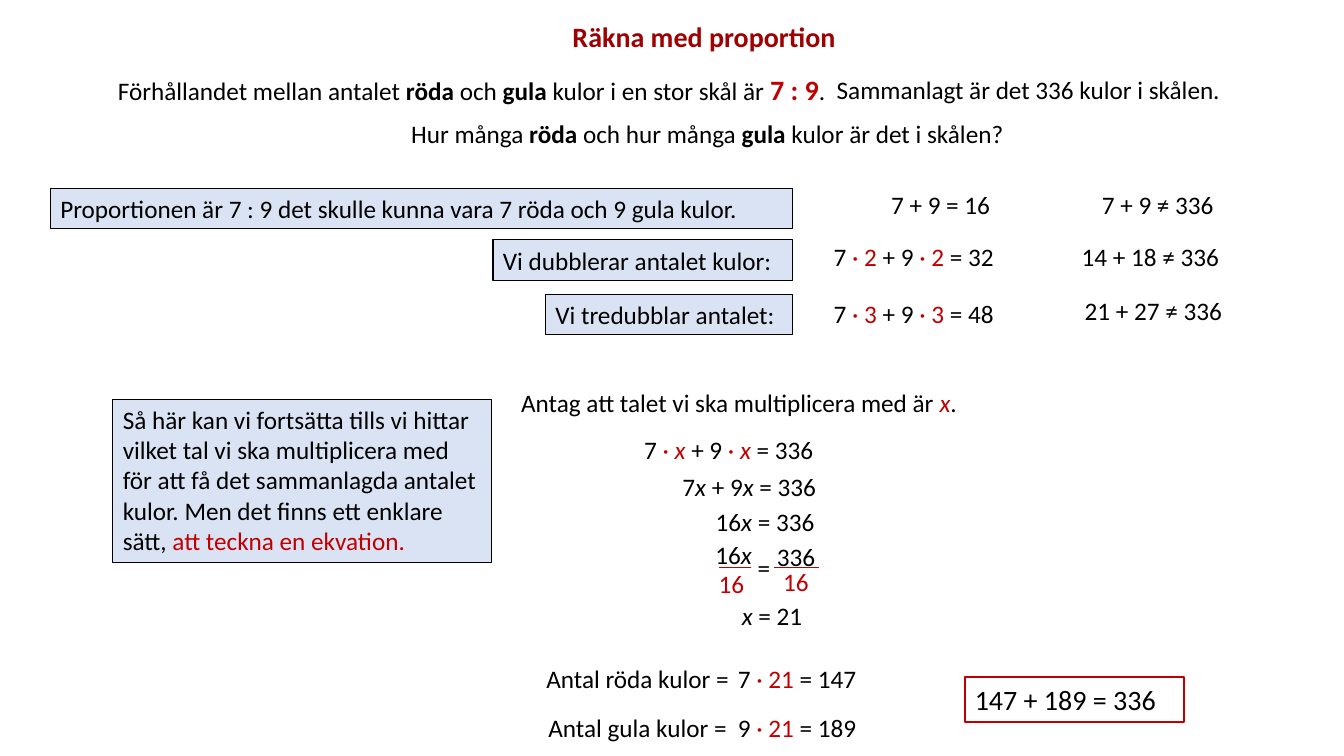
from pptx import Presentation
from pptx.dml.color import RGBColor
from pptx.enum.shapes import MSO_CONNECTOR, MSO_SHAPE
from pptx.enum.text import MSO_ANCHOR, MSO_AUTO_SIZE, PP_ALIGN
from pptx.util import Inches, Pt
from lxml.etree import SubElement
from pptx.oxml.ns import qn

BLACK, RED, TITLE_RED, PALE_BLUE = "000000", "C00000", "9F0002", "DAE3F3"


def color(value):
    return RGBColor.from_string(value)


def bold(text, **style):
    return text, {"bold": True, **style}


def italic(text, **style):
    return text, {"italic": True, **style}


def red(text):
    return text, {"ink": RED}


class Lesson:
    """Holds the text style and the current page."""

    font, size, line_height = "Calibri", 18, 0.4

    def __init__(self, page):
        self.page = page

    def fill_text(self, box, spans, size, wrap):
        frame = box.text_frame
        frame.word_wrap = wrap
        frame.auto_size = MSO_AUTO_SIZE.SHAPE_TO_FIT_TEXT
        frame.vertical_anchor = MSO_ANCHOR.TOP
        para = frame.paragraphs[0]
        para.alignment = PP_ALIGN.LEFT
        for item in spans:
            text, style = (item, {}) if isinstance(item, str) else item
            span = para.add_run()
            span.text = text
            span.font.name = self.font
            span.font.size = Pt(style.get("size", size))
            span.font.bold = style.get("bold", False)
            span.font.italic = style.get("italic", False)
            span.font.color.rgb = color(style.get("ink", BLACK))

    def text(self, left, top, width, *spans, height=line_height, size=size, wrap=True):
        box = self.page.shapes.add_textbox(
            Inches(left), Inches(top), Inches(width), Inches(height))
        self.fill_text(box, spans, size, wrap)

    def panel(self, left, top, width, *spans, height=line_height, size=size,
              fill=PALE_BLUE, line=BLACK, weight=0.75):
        box = self.page.shapes.add_shape(
            MSO_SHAPE.RECTANGLE, Inches(left), Inches(top), Inches(width), Inches(height))
        box.shadow.inherit = False
        if fill:
            box.fill.solid()
            box.fill.fore_color.rgb = color(fill)
        else:
            box.fill.background()
        box.line.color.rgb = color(line)
        box.line.width = Pt(weight)
        self.fill_text(box, spans, size, True)

    def fraction_bar(self, left, right, y):
        bar = self.page.shapes.add_connector(
            MSO_CONNECTOR.STRAIGHT, Inches(left), Inches(y), Inches(right), Inches(y))
        bar.line.color.rgb = color(RED)
        bar.line.width = Pt(0.75)
        SubElement(bar.element.spPr, qn("a:effectLst"))


def main():
    deck = Presentation()
    deck.slide_width, deck.slide_height = Inches(13.33), Inches(7.5)
    lesson = Lesson(deck.slides.add_slide(deck.slide_layouts[6]))

    # Title and question
    lesson.text(5.58, 0.14, 2.84, bold("Räkna med proportion", ink=TITLE_RED),
                height=0.44, size=20, wrap=False)
    lesson.text(1.07, 0.67, 7.97, "Förhållandet mellan antalet ", bold("röda "), "och ",
                bold("gula "), "kulor i en stor skål är ",
                bold("7 : 9", ink=RED, size=20), ".", height=0.44)
    lesson.text(8.2, 0.69, 4.17, "Sammanlagt är det 336 kulor i skålen.")
    lesson.text(3.98, 1.12, 6.54, "Hur många ", bold("röda"), " och hur många ",
                bold("gula "), "kulor är det i skålen?")

    # Trial steps: panels share their right edge
    panel_right = 7.86
    for top, width, label in (
            (1.87, 7.36, "Proportionen är 7 : 9 det skulle kunna vara 7 röda och 9 gula kulor."),
            (2.38, 2.97, "Vi dubblerar antalet kulor:"),
            (2.92, 2.45, "Vi tredubblar antalet:")):
        lesson.panel(panel_right - width, top, width, label)

    lesson.text(8.74, 1.83, 1.23, "7 + 9 = 16")
    for factor, top in ((2, 2.34), (3, 2.91)):
        lesson.text(8.17, top, 2.3, "7 ", red(f"· {factor} "), "+ 9",
                    red(f" · {factor}"), f" = {16 * factor}")
    for factor, left, top, width in (
            (1, 10.83, 1.83, 1.47), (2, 10.63, 2.34, 1.81), (3, 10.66, 2.88, 1.81)):
        lesson.text(left, top, width, f"{7 * factor} + {9 * factor} ≠ 336")

    # Why an equation helps
    lesson.panel(1.12, 3.96, 3.76,
                 "Så här kan vi fortsätta tills vi hittar vilket tal vi ska multiplicera med "
                 "för att få det sammanlagda antalet kulor. Men det finns ett enklare sätt, ",
                 red("att teckna en ekvation."), height=1.62)

    # Equation
    x, red_x = italic("x"), italic("x", ink=RED)
    lesson.text(5.07, 3.79, 4.92, "Antag att talet vi ska multiplicera med är ", red_x, ".")
    lesson.text(6.29, 4.26, 2.3, "7 ", red("· "), italic("x ", ink=RED), "+ 9",
                red(" · "), red_x, " = 336")
    lesson.text(6.67, 4.63, 2.3, "7", x, " + 9", x, " = 336")
    lesson.text(7, 4.97, 2.3, "16", x, " = 336")

    # Division of both sides by 16
    lesson.text(6.94, 5.3, 0.62, " 16", x, wrap=False)
    lesson.text(7.36, 5.43, 0.48, " =")
    lesson.text(7.55, 5.32, 0.65, " 336")
    for left, top in ((7.03, 5.59), (7.67, 5.57)):
        lesson.text(left, top, 0.46, red("16"), wrap=False)
    for left, right in ((7.13, 7.45), (7.68, 8.12)):
        lesson.fraction_bar(left, right, 5.63)
    lesson.text(7.26, 5.91, 1.23, x, " = 21")

    # Answer and check
    for name, share, left, top in (("röda", 7, 5.32, 6.53), ("gula", 9, 5.34, 7.02)):
        lesson.text(left, top, 2.17, f"Antal {name} kulor =")
        lesson.text(7.22, top, 2.3, f"{share} ", red("· 21 "), f"= {share * 21}")
    lesson.panel(9.57, 6.72, 2.17, "147 + 189 = 336", height=0.44, size=20,
                 fill=None, line=RED, weight=1.5)

    deck.save("out.pptx")


if __name__ == "__main__":
    main()
